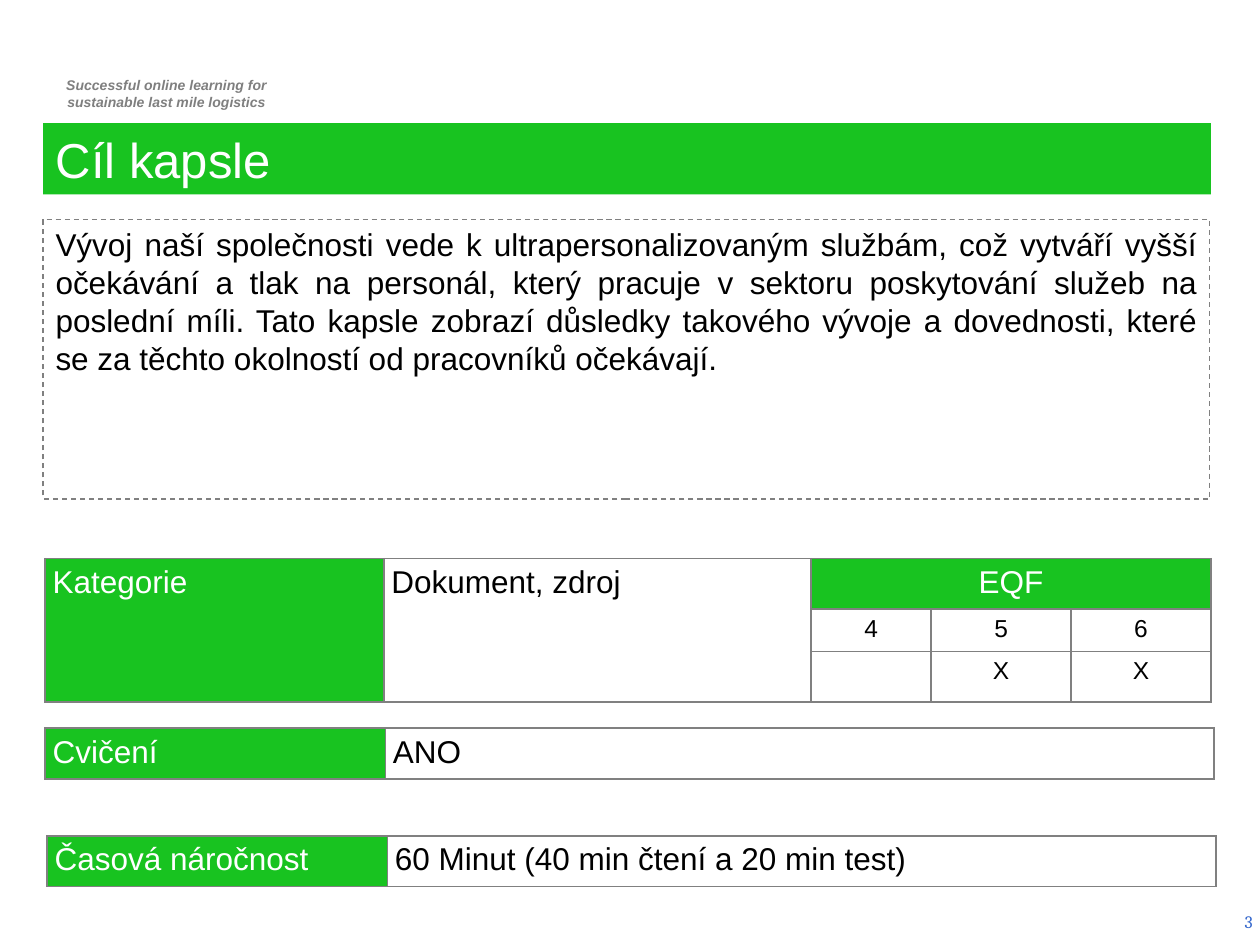
from lxml.etree import SubElement
from pptx import Presentation
from pptx.dml.color import RGBColor
from pptx.enum.dml import MSO_LINE_DASH_STYLE as Dash
from pptx.enum.shapes import MSO_SHAPE as Shape
from pptx.enum.text import MSO_ANCHOR as Anchor, PP_ALIGN as Align
from pptx.oxml.ns import qn
from pptx.util import Cm, Pt

COLORS = {
    "green": "18C320",
    "gray": "808080",
    "motto": "7F7F7F",
    "blue": "3366CC",
    "white": "FFFFFF",
    "black": "000000",
}


def color(name):
    return RGBColor.from_string(COLORS[name])


def place(shape, left, top, width, height):
    shape.left, shape.top = Cm(left), Cm(top)
    shape.width, shape.height = Cm(width), Cm(height)


def write(frame, text, size=18, ink="black", align=Align.LEFT,
          font="Arial", bold=False, italic=False, anchor=Anchor.TOP):
    frame.word_wrap = True
    frame.vertical_anchor = anchor
    frame.text = text
    for para in frame.paragraphs:
        para.alignment = align
        for run in para.runs:
            run.font.name = font
            run.font.size = Pt(size)
            run.font.bold = bold
            run.font.italic = italic
            run.font.color.rgb = color(ink)


def add_label(slide, box, text, **style):
    label = slide.shapes.add_textbox(*map(Cm, box))
    write(label.text_frame, text, **style)
    return label


def add_title(slide, box, text):
    title = slide.shapes.title
    place(title, *box)
    title.fill.solid()
    title.fill.fore_color.rgb = color("green")
    write(title.text_frame, text, size=28, ink="white")


def add_panel(slide, box, text):
    panel = slide.shapes.add_shape(Shape.RECTANGLE, *map(Cm, box))
    panel.shadow.inherit = False
    panel.fill.background()
    panel.line.color.rgb = color("gray")
    panel.line.width = Pt(0)
    panel.line.dash_style = Dash.DASH
    write(panel.text_frame, text, align=Align.JUSTIFY)


def add_edges(cell):
    props = cell._tc.get_or_add_tcPr()
    for side in ("a:lnL", "a:lnR", "a:lnT", "a:lnB"):
        line = SubElement(props, qn(side), w=str(Pt(0.96)))
        fill = SubElement(line, qn("a:solidFill"))
        SubElement(fill, qn("a:srgbClr"), val=COLORS["gray"])


def add_grid(slide, left, top, cols, rows):
    frame = slide.shapes.add_table(
        len(rows), len(cols), Cm(left), Cm(top), Cm(sum(cols)), Cm(sum(rows)))
    table = frame.table
    table.first_row = table.horz_banding = False
    for col, width in zip(table.columns, cols):
        col.width = Cm(width)
    for row, height in zip(table.rows, rows):
        row.height = Cm(height)
    for cell in table.iter_cells():
        add_edges(cell)
        cell.fill.background()
        cell.margin_left = cell.margin_right = Cm(0.15)
    return table


def fill_cell(cell, text, head=False, **style):
    if head:
        cell.fill.solid()
        cell.fill.fore_color.rgb = color("green")
    write(cell.text_frame, text, ink="white" if head else "black", **style)


def fill_pair(table, head, text):
    fill_cell(table.cell(0, 0), head, head=True, align=Align.JUSTIFY)
    fill_cell(table.cell(0, 1), text, align=Align.JUSTIFY)


def add_levels(slide):
    table = add_grid(slide, 0.91, 11.26,
                     [6.83, 8.61, 2.42, 2.82, 2.82], [1.02, 0.85, 1.02])
    for col in (0, 1):
        table.cell(0, col).merge(table.cell(2, col))
    table.cell(0, 2).merge(table.cell(0, 4))
    fill_pair(table, "Kategorie", "Dokument, zdroj")
    fill_cell(table.cell(0, 2), "EQF", head=True, align=Align.CENTER)
    marks = [("4", "5", "6"), ("", "X", "X")]
    for row, texts in enumerate(marks, 1):
        for col, text in enumerate(texts, 2):
            fill_cell(table.cell(row, col), text, size=14, align=Align.CENTER)


def main():
    deck = Presentation()
    deck.slide_width, deck.slide_height = Cm(25.4), Cm(19.05)
    slide = deck.slides.add_slide(deck.slide_layouts[5])

    add_label(slide, (0.78, 1.42, 5.16, 0.94),
              "Successful online learning for\nsustainable last mile logistics",
              size=8, ink="motto", align=Align.CENTER, bold=True, italic=True)
    number = add_label(slide, (19.58, 18.11, 5.82, 1.02 - 0.08), "3",
                       size=10, ink="blue", align=Align.RIGHT,
                       font="Cambria", anchor=Anchor.MIDDLE)
    number.text_frame.margin_right = Cm(0.15)

    add_title(slide, (0.87, 2.48, 23.54, 1.44), "Cíl kapsle")
    add_panel(slide, (0.87, 4.42, 23.52, 5.64),
              "Vývoj naší společnosti vede k ultrapersonalizovaným službám, "
              "což vytváří vyšší očekávání a tlak na personál, který pracuje "
              "v sektoru poskytování služeb na poslední míli. Tato kapsle "
              "zobrazí důsledky takového vývoje a dovednosti, které se za "
              "těchto okolností od pracovníků očekávají.")
    add_levels(slide)

    pairs = [
        (0.91, 14.68, "Cvičení", "ANO"),
        (0.95, 16.85, "Časová náročnost",
         "60 Minut (40 min čtení a 20 min test)"),
    ]
    for left, top, head, text in pairs:
        table = add_grid(slide, left, top, [6.86, 16.7], [1.02])
        fill_pair(table, head, text)

    deck.save("out.pptx")


if __name__ == "__main__":
    main()
